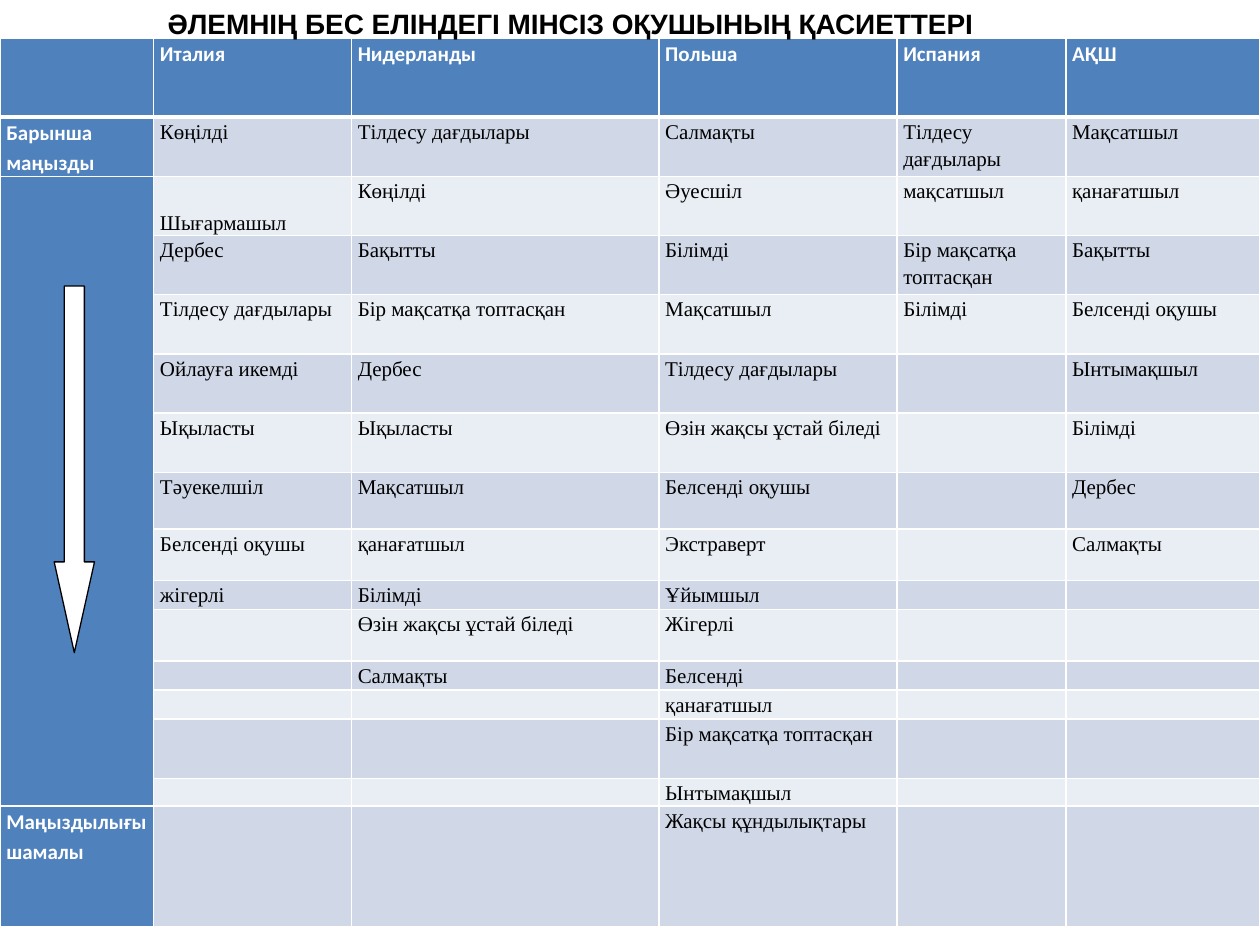
"""Build a slide comparing the ideal pupil's qualities in five countries."""
from lxml import etree
from pptx import Presentation
from pptx import util as u
from pptx.dml import color
from pptx.enum import shapes, text
from pptx.oxml import ns

rgb = color.RGBColor.from_string
THEME = {
    "blue": rgb("4F81BD"),
    "bands": [rgb("D0D8E8"), rgb("E9EDF4")],
    "white": rgb("FFFFFF"),
    "black": rgb("000000"),
    "title": {"name": "Arial", "size": u.Pt(16), "bold": True},
    "heading": {"name": "Calibri", "size": u.Pt(12), "bold": True},
    "body": {"name": "Times New Roman", "size": u.Pt(12), "bold": False},
    "cell": {"margin_left": u.Inches(0.05), "margin_right": u.Inches(0.05),
             "margin_top": 0, "margin_bottom": 0},
}
COLUMN_WIDTHS = [1.22, 1.57, 2.44, 1.89, 1.34, 1.54]
ROW_HEIGHTS = [0.63] + [0.47] * 6 + [0.45, 0.41, 0.23, 0.41, 0.23, 0.23, 0.47, 0.22, 0.96]
COUNTRIES = {
    "Италия": ["Көңілді", "Шығармашыл", "Дербес", "Тілдесу дағдылары", "Ойлауға икемді",
               "Ықыласты", "Тәуекелшіл", "Белсенді оқушы", "жігерлі"],
    "Нидерланды": ["Тілдесу дағдылары", "Көңілді", "Бақытты", "Бір мақсатқа топтасқан",
                   "Дербес", "Ықыласты", "Мақсатшыл", "қанағатшыл", "Білімді",
                   "Өзін жақсы ұстай біледі", "Салмақты"],
    "Польша": ["Салмақты", "Әуесшіл", "Білімді", "Мақсатшыл", "Тілдесу дағдылары",
               "Өзін жақсы ұстай біледі", "Белсенді оқушы", "Экстраверт", "Ұйымшыл",
               "Жігерлі", "Белсенді", "қанағатшыл", "Бір мақсатқа топтасқан",
               "Ынтымақшыл", "Жақсы құндылықтары"],
    "Испания": ["Тілдесу дағдылары", "мақсатшыл", "Бір мақсатқа топтасқан", "Білімді"],
    "АҚШ": ["Мақсатшыл", "қанағатшыл", "Бақытты", "Белсенді оқушы", "Ынтымақшыл",
            "Білімді", "Дербес", "Салмақты"],
}
LAST = len(ROW_HEIGHTS) - 1
RANKS = {1: "Барынша маңызды", LAST: "Маңыздылығы шамалы"}


def apply(target, values):
    for name, value in values.items():
        setattr(target, name, value)


def add_border(cell, side, points):
    line = etree.SubElement(cell._tc.get_or_add_tcPr(), ns.qn(f"a:ln{side}"),
                            w=str(u.Pt(points)))
    fill = etree.SubElement(line, ns.qn("a:solidFill"))
    etree.SubElement(fill, ns.qn("a:srgbClr"), val=str(THEME["white"]))


deck = Presentation()
apply(deck, {"slide_width": u.Inches(10), "slide_height": u.Inches(7.5)})
page = deck.slides.add_slide(deck.slide_layouts[6])

table = page.shapes.add_table(
    len(ROW_HEIGHTS), len(COLUMN_WIDTHS), u.Inches(0), u.Inches(0.3),
    u.Inches(sum(COLUMN_WIDTHS)), u.Inches(sum(ROW_HEIGHTS))).table
apply(table, {"first_row": False, "horz_banding": False})
for column, width in zip(table.columns, COLUMN_WIDTHS):
    column.width = u.Inches(width)
for row, height in zip(table.rows, ROW_HEIGHTS):
    row.height = u.Inches(height)

columns = [[RANKS.get(index, "") for index in range(LAST + 1)]]
columns += [[country, *traits] for country, traits in COUNTRIES.items()]
for x, words in enumerate(columns):
    for y in range(LAST + 1):
        cell = table.cell(y, x)
        heading = x == 0 or y == 0
        apply(cell, THEME["cell"])
        for side in "LRTB":
            thick = (y, side) in [(0, "B"), (1, "T")]
            add_border(cell, side, 3 if thick else 1)
        cell.fill.solid()
        cell.fill.fore_color.rgb = THEME["blue"] if heading else THEME["bands"][(y - 1) % 2]
        para = cell.text_frame.paragraphs[0]
        para.line_spacing = 1.15
        if y < len(words) and words[y]:
            span = para.add_run()
            span.text = words[y]
            apply(span.font, THEME["heading" if heading else "body"])
            span.font.color.rgb = THEME["white" if heading else "black"]
        else:
            etree.SubElement(para._p, ns.qn("a:endParaRPr"), sz="1200")
table.cell(2, 1).vertical_anchor = text.MSO_ANCHOR.BOTTOM
table.cell(2, 0).merge(table.cell(LAST - 1, 0))

box = page.shapes.add_textbox(u.Inches(0.91), u.Inches(0), u.Inches(7.24), u.Inches(0.64))
apply(box.text_frame, {"word_wrap": True, "vertical_anchor": text.MSO_ANCHOR.TOP})
para = box.text_frame.paragraphs[0]
para.alignment = text.PP_ALIGN.CENTER
span = para.add_run()
span.text = "ӘЛЕМНІҢ БЕС ЕЛІНДЕГІ МІНСІЗ ОҚУШЫНЫҢ ҚАСИЕТТЕРІ"
apply(span.font, THEME["title"])
span.font.color.rgb = THEME["black"]

arrow = page.shapes.add_shape(shapes.MSO_SHAPE.DOWN_ARROW, u.Inches(0.43), u.Inches(2.27),
                              u.Inches(0.32), u.Inches(2.91))
arrow.adjustments[0] = 0.5
arrow.adjustments[1] = 2.25
arrow.shadow.inherit = False
arrow.fill.solid()
arrow.fill.fore_color.rgb = THEME["white"]
arrow.line.color.rgb = THEME["black"]
arrow.line.width = u.Pt(0.75)

deck.save("out.pptx")
